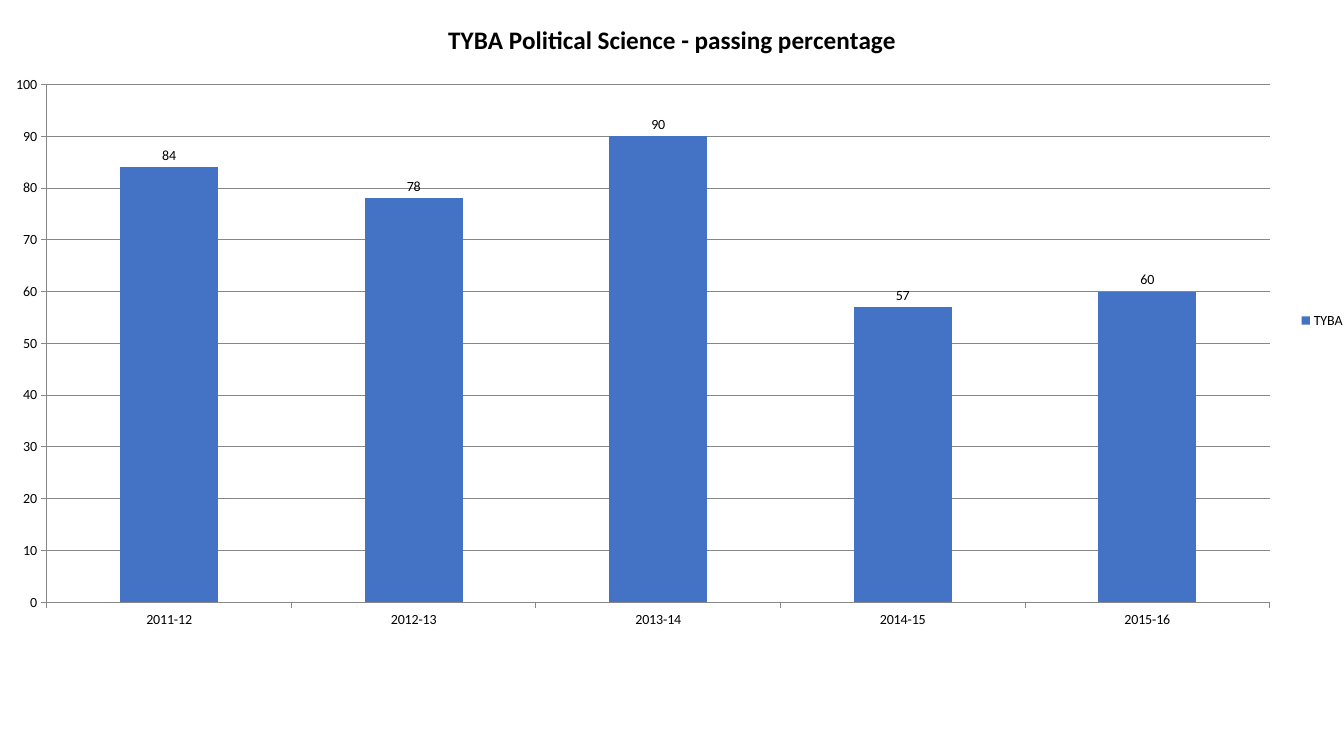
from dataclasses import dataclass

from pptx import Presentation
from pptx.chart.data import CategoryChartData
from pptx.dml.color import RGBColor
from pptx.enum.chart import XL_CHART_TYPE as ChartType
from pptx.enum.chart import XL_LABEL_POSITION as LabelPosition
from pptx.enum.chart import XL_LEGEND_POSITION as LegendPosition
from pptx.enum.chart import XL_TICK_MARK as TickMark
from pptx.util import Cm, Pt


@dataclass(frozen=True)
class Theme:
    font: str = "Calibri"
    text: RGBColor = RGBColor(0x00, 0x00, 0x00)
    bar: RGBColor = RGBColor(0x44, 0x72, 0xC4)
    grid: RGBColor = RGBColor(0x87, 0x87, 0x87)
    title_size: Pt = Pt(18)
    label_size: Pt = Pt(10)
    line_width: Pt = Pt(0.75)


THEME = Theme()
HEADING = "TYBA Political Science - passing percentage"
PASS_RATES = {
    "2011-12": 84,
    "2012-13": 78,
    "2013-14": 90,
    "2014-15": 57,
    "2015-16": 60,
}


def style_font(font, size, bold=False):
    font.name = THEME.font
    font.size = size
    font.bold = bold
    font.color.rgb = THEME.text


def style_line(line):
    line.color.rgb = THEME.grid
    line.width = THEME.line_width


def add_heading(chart):
    chart.has_title = True
    heading = chart.chart_title.text_frame.paragraphs[0].add_run()
    heading.text = HEADING
    style_font(heading.font, THEME.title_size, bold=True)
    chart.chart_title.include_in_layout = False


def style_axes(chart):
    years, percent = chart.category_axis, chart.value_axis
    for axis in (years, percent):
        axis.major_tick_mark = TickMark.OUTSIDE
        axis.minor_tick_mark = TickMark.NONE
        style_line(axis.format.line)
    percent.minimum_scale, percent.maximum_scale = 0, 100
    percent.major_unit = 10
    percent.has_major_gridlines = True
    style_line(percent.major_gridlines.format.line)


def style_bars(chart):
    bars = chart.plots[0]
    bars.gap_width = 150
    bars.vary_by_categories = False
    fill = bars.series[0].format.fill
    fill.solid()
    fill.fore_color.rgb = THEME.bar
    labels = bars.series[0].data_labels
    labels.show_value = True
    labels.position = LabelPosition.OUTSIDE_END
    style_font(labels.font, THEME.label_size)


def add_legend(chart):
    chart.has_legend = True
    chart.legend.position = LegendPosition.RIGHT
    chart.legend.include_in_layout = False


def add_pass_rate_chart(slide):
    results = CategoryChartData()
    results.categories = list(PASS_RATES)
    results.add_series("TYBA", list(PASS_RATES.values()))
    chart = slide.shapes.add_chart(
        ChartType.COLUMN_CLUSTERED,
        Cm(-0.28), Cm(0), Cm(34.44), Cm(16.15), results,
    ).chart
    style_font(chart.font, THEME.label_size)
    add_heading(chart)
    style_axes(chart)
    style_bars(chart)
    add_legend(chart)


def main():
    deck = Presentation()
    deck.slide_width, deck.slide_height = Cm(33.87), Cm(19.05)
    # The heading belongs to the chart, so the blank layout is used
    slide = deck.slides.add_slide(deck.slide_layouts[6])
    add_pass_rate_chart(slide)
    deck.save("out.pptx")


if __name__ == "__main__":
    main()
